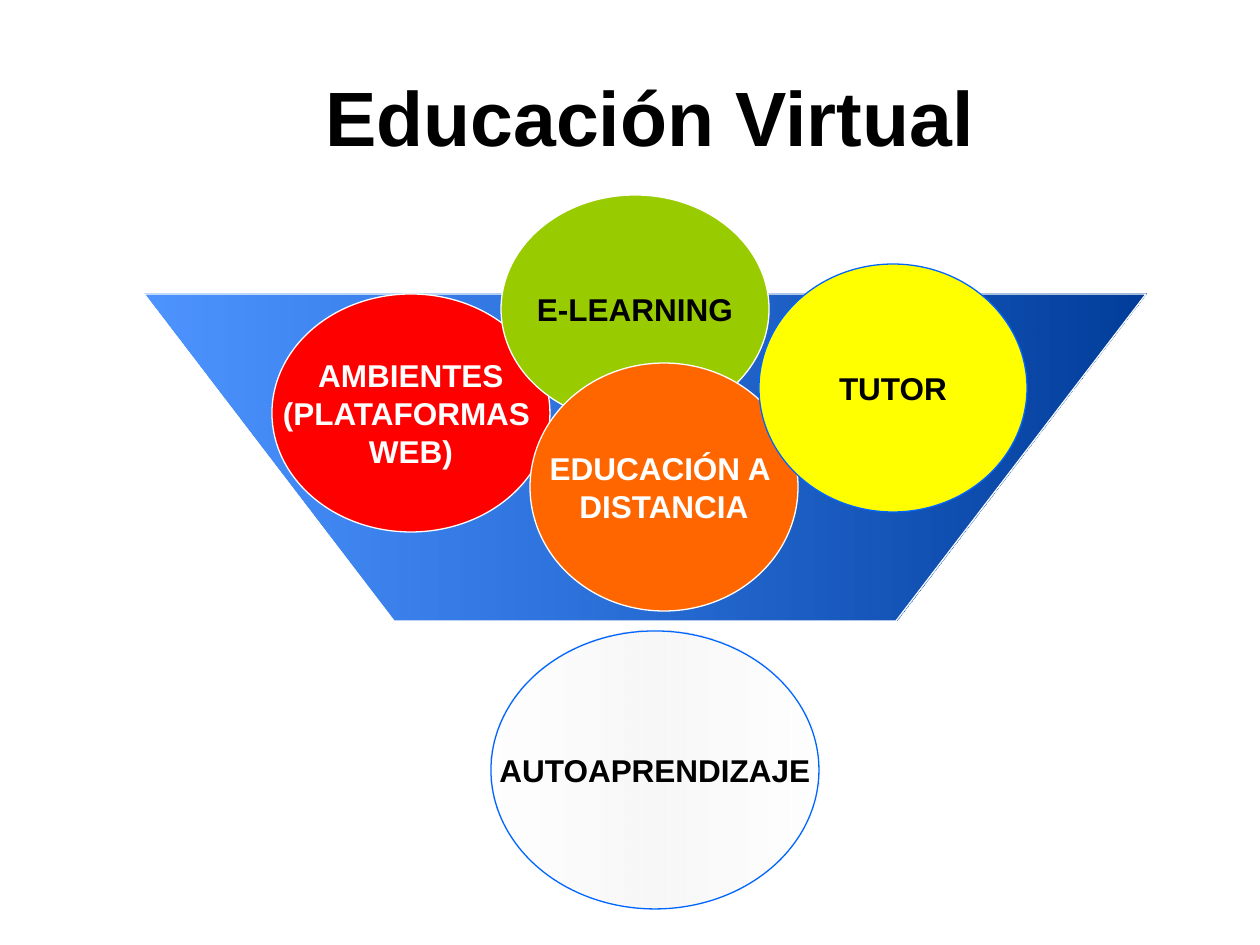
from lxml.etree import SubElement
from pptx import Presentation
from pptx.dml.color import RGBColor
from pptx.enum.shapes import MSO_SHAPE as Shape
from pptx.enum.text import MSO_ANCHOR as Anchor, MSO_AUTO_SIZE as AutoSize, PP_ALIGN as Align
from pptx.oxml.ns import qn
from pptx.util import Emu, Pt

PX_PER_INCH = 126
SCALE = 914400 / PX_PER_INCH

BLACK = RGBColor(0x00, 0x00, 0x00)
WHITE = RGBColor(0xFF, 0xFF, 0xFF)
RED = RGBColor(0xFF, 0x00, 0x00)
GREEN = RGBColor(0x99, 0xCC, 0x00)
ORANGE = RGBColor(0xFF, 0x66, 0x00)
YELLOW = RGBColor(0xFF, 0xFF, 0x00)
BLUE = RGBColor(0x00, 0x66, 0xFF)

BLUE_FADE = [(0, BLUE, "alpha", 70), (100, BLUE, "shade", 31.37)]
SILVER_FADE = [(0, WHITE, "alpha", 85), (50, WHITE, "shade", 93.7), (100, WHITE, "alpha", 85)]

FUNNEL = [(144, 294), (394, 621), (896, 621), (1146, 294)]

CIRCLES = [
    (["AMBIENTES", "(PLATAFORMAS ", "WEB)"], (272, 294, 278, 238), RED, WHITE, WHITE),
    (["E-LEARNING"], (501, 195, 268, 228), GREEN, WHITE, BLACK),
    (["EDUCACIÓN A ", "DISTANCIA"], (530, 363, 268, 248), ORANGE, WHITE, WHITE),
    (["AUTOAPRENDIZAJE"], (491, 631, 328, 278), SILVER_FADE, BLUE, BLACK),
    (["TUTOR"], (759, 264, 268, 248), YELLOW, BLUE, BLACK),
]


def px(length):
    return Emu(round(length * SCALE))


def fill_gradient(shape, stops):
    shape.fill.gradient()
    shape.fill.gradient_angle = 0
    stop_list = shape.fill._fill._gradFill.find(qn("a:gsLst"))
    for old_stop in list(stop_list):
        stop_list.remove(old_stop)
    for position, color, effect, percent in stops:
        stop = SubElement(stop_list, qn("a:gs"), pos=str(position * 1000))
        base = SubElement(stop, qn("a:srgbClr"), val=str(color))
        SubElement(base, qn(f"a:{effect}"), val=str(round(percent * 1000)))


def style_shape(shape, fill, line_color):
    shape.shadow.inherit = False
    if isinstance(fill, RGBColor):
        shape.fill.solid()
        shape.fill.fore_color.rgb = fill
    else:
        fill_gradient(shape, fill)
    shape.line.color.rgb = line_color
    shape.line.width = Pt(0.75)


def style_paragraph(para, size, color):
    para.alignment = Align.CENTER
    para.font.name = "Arial"
    para.font.size = Pt(size)
    para.font.bold = True
    para.font.color.rgb = color


def set_title(page, text):
    title = page.shapes.title
    title.left, title.top, title.width, title.height = map(px, (243, 55, 814, 105))
    frame = title.text_frame
    frame.text = text
    frame.auto_size = AutoSize.NONE
    frame.vertical_anchor = Anchor.TOP
    frame.margin_top, frame.margin_bottom = px(15), 0
    style_paragraph(frame.paragraphs[0], 44, BLACK)


def add_funnel(page):
    builder = page.shapes.build_freeform(*FUNNEL[0], scale=SCALE)
    builder.add_line_segments(FUNNEL[1:], close=True)
    style_shape(builder.convert_to_shape(), BLUE_FADE, WHITE)


def add_circle(page, lines, bounds, fill, line_color, text_color):
    circle = page.shapes.add_shape(Shape.OVAL, *map(px, bounds))
    style_shape(circle, fill, line_color)
    frame = circle.text_frame
    frame.word_wrap = False
    frame.vertical_anchor = Anchor.MIDDLE
    frame.text = "\n".join(lines)
    for para in frame.paragraphs:
        style_paragraph(para, 18, text_color)


def main():
    deck = Presentation()
    deck.slide_width, deck.slide_height = px(1260), px(945)
    page = deck.slides.add_slide(deck.slide_layouts[5])
    add_funnel(page)
    set_title(page, "Educación Virtual")
    for circle in CIRCLES:
        add_circle(page, *circle)
    deck.save("out.pptx")


if __name__ == "__main__":
    main()
